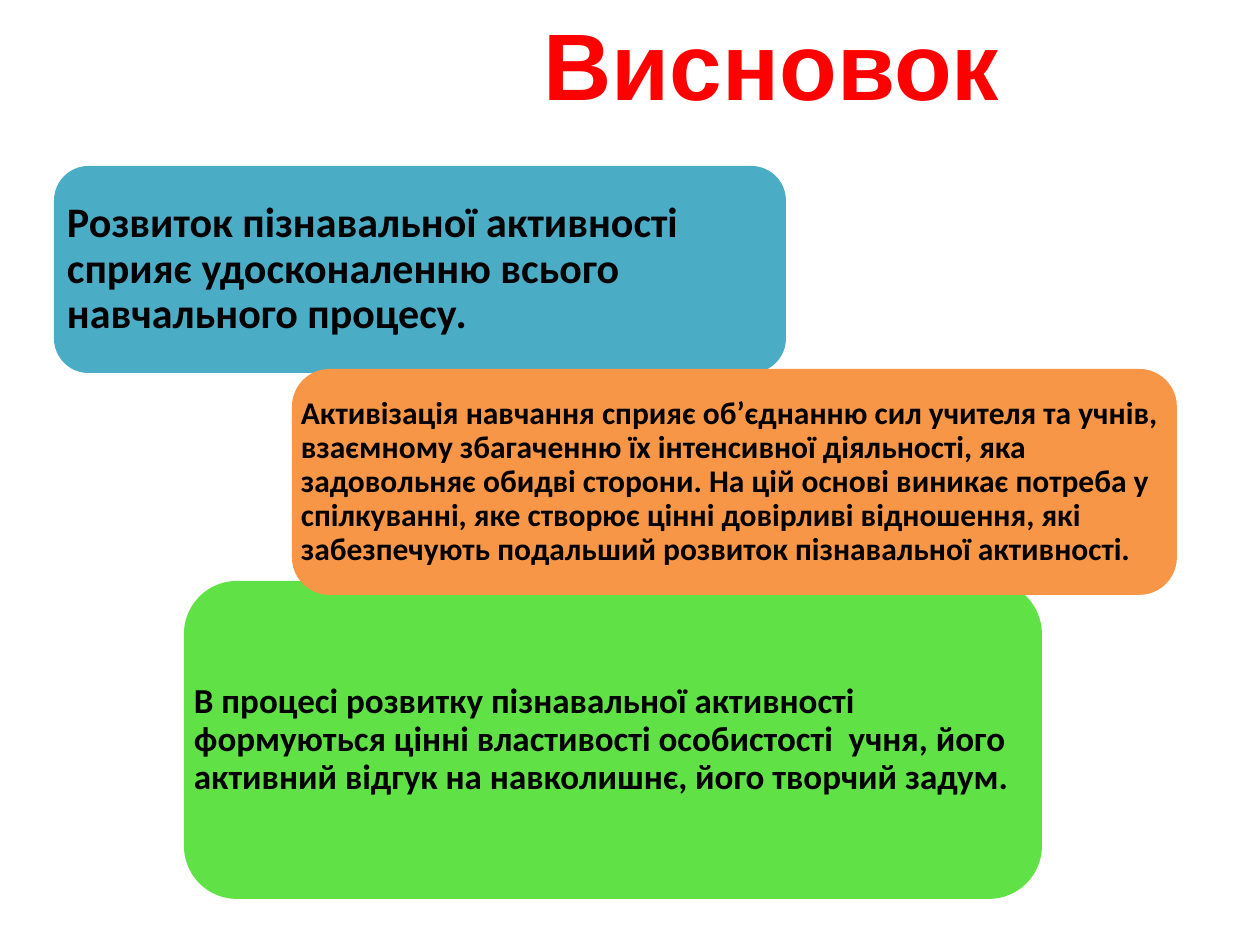
from pptx import Presentation
from pptx.dml.color import RGBColor
from pptx.enum.shapes import MSO_SHAPE
from pptx.enum.text import MSO_ANCHOR, PP_ALIGN
from pptx.util import Pt

PX = 914400 // 126
ROUNDED = MSO_SHAPE.ROUNDED_RECTANGLE
TOP, MIDDLE = MSO_ANCHOR.TOP, MSO_ANCHOR.MIDDLE
LEFT, CENTER = PP_ALIGN.LEFT, PP_ALIGN.CENTER

CARDS = [
    ((54, 166, 732, 207), "4BACC6", 24, 13,
     "Розвиток пізнавальної активності сприяє удосконаленню всього "
     "навчального процесу."),
    ((184, 581, 858, 318), "60E146", 20, 10,
     "В процесі розвитку пізнавальної активності формуються цінні "
     "властивості особистості  учня, його активний відгук на навколишнє, "
     "його творчий задум."),
    ((292, 369, 885, 226), "F79646", 18, 9,
     "Активізація навчання сприяє об’єднанню сил учителя та учнів, "
     "взаємному збагаченню їх інтенсивної діяльності, яка задовольняє "
     "обидві сторони. На цій основі виникає потреба у спілкуванні, яке "
     "створює цінні довірливі відношення, які забезпечують подальший "
     "розвиток пізнавальної активності."),
]


def color(value):
    return RGBColor.from_string(value)


class SlideBuilder:
    """Holds the text style and the current page, and adds elements to it."""

    body_font = "Calibri"
    title_font = "Arial"
    body_color = "000000"
    title_color = "FF0000"

    def __init__(self, page):
        self.page = page

    def text(self, area, content, size, font, ink, align, anchor, insets, spacing):
        box = self.page.shapes.add_textbox(*(n * PX for n in area))
        frame = box.text_frame
        frame.word_wrap = True
        frame.vertical_anchor = anchor
        frame.margin_left = frame.margin_right = insets[0] * PX
        frame.margin_top = frame.margin_bottom = insets[1] * PX
        para = frame.paragraphs[0]
        para.alignment = align
        para.line_spacing = spacing
        span = para.add_run()
        span.text = content
        span.font.name = font
        span.font.size = Pt(size)
        span.font.bold = True
        span.font.color.rgb = color(ink)

    def title(self, area, content):
        self.text(area, content, 54, self.title_font, self.title_color,
                  CENTER, TOP, (13, 6), 1.0)

    def card(self, area, fill, size, inset, content):
        panel = self.page.shapes.add_shape(ROUNDED, *(n * PX for n in area))
        panel.shadow.inherit = False
        panel.fill.solid()
        panel.fill.fore_color.rgb = color(fill)
        panel.line.fill.background()
        self.text(area, content, size, self.body_font, self.body_color,
                  LEFT, MIDDLE, (inset, inset), 0.9)


def main():
    deck = Presentation()
    deck.slide_width = 1260 * PX
    deck.slide_height = 945 * PX
    builder = SlideBuilder(deck.slides.add_slide(deck.slide_layouts[6]))
    for card in CARDS:
        builder.card(*card)
    builder.title((386, 0, 771, 127), "Висновок")
    deck.save("out.pptx")


if __name__ == "__main__":
    main()
